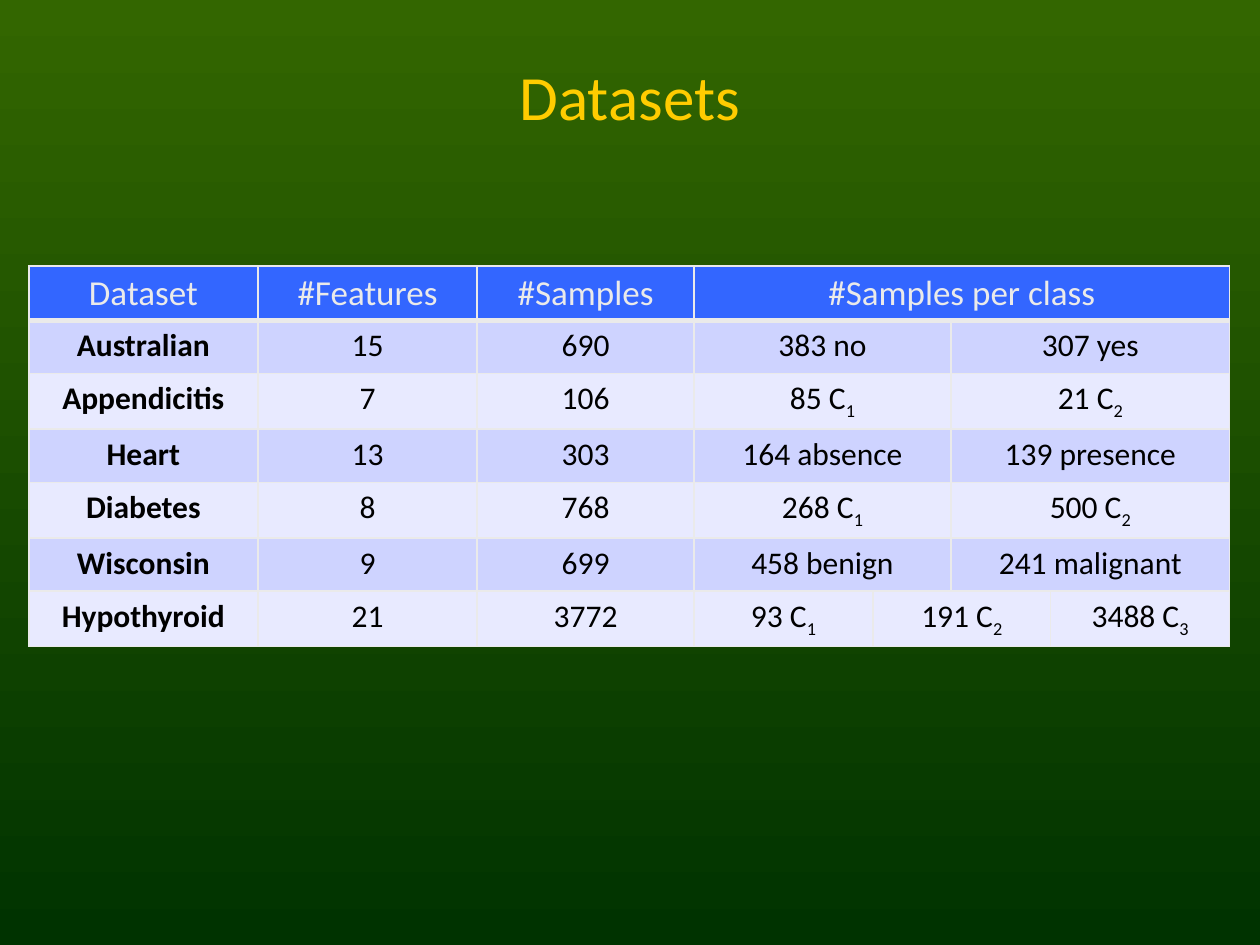
"""Build the slide that lists the datasets and their samples per class."""
from dataclasses import dataclass

import lxml.etree
import pptx
import pptx.dml.color
import pptx.enum.text
import pptx.oxml.ns
import pptx.slide
import pptx.table
import pptx.text.text
import pptx.util

Cm = pptx.util.Cm
RGBColor = pptx.dml.color.RGBColor
qn = pptx.oxml.ns.qn

FONT = "Calibri"
GREEN_TOP = RGBColor(0x33, 0x66, 0x00)
GREEN_BOTTOM = RGBColor(0x00, 0x33, 0x00)
GOLD = RGBColor(0xFF, 0xCC, 0x00)
BLUE = RGBColor(0x33, 0x66, 0xFF)
BAND_DARK = RGBColor(0xCE, 0xD3, 0xFF)
BAND_LIGHT = RGBColor(0xE8, 0xEA, 0xFF)
PALE = RGBColor(0xEA, 0xEA, 0xEA)
BLACK = RGBColor(0x00, 0x00, 0x00)

COLUMN_WIDTHS = [4.62, 4.42, 4.37, 3.61, 1.57, 2.01, 3.61]
ROW_HEIGHT = 1.07
HEADER_SPANS = (1, 1, 1, 4)
TWO_CLASSES = (1, 1, 1, 2, 2)
THREE_CLASSES = (1, 1, 1, 1, 2, 1)


@dataclass
class Row:
    """Texts of one table row, with "_" before a subscript, and their column spans."""
    texts: list[str]
    spans: tuple[int, ...] = TWO_CLASSES


ROWS = [
    Row(["Dataset", "#Features", "#Samples", "#Samples per class"], HEADER_SPANS),
    Row(["Australian", "15", "690", "383 no", "307 yes"]),
    Row(["Appendicitis", "7", "106", "85 C_1", "21 C_2"]),
    Row(["Heart", "13", "303", "164 absence", "139 presence"]),
    Row(["Diabetes", "8", "768", "268 C_1", "500 C_2"]),
    Row(["Wisconsin", "9", "699", "458 benign", "241 malignant"]),
    Row(["Hypothyroid", "21", "3772", "93 C_1", "191 C_2", "3488 C_3"], THREE_CLASSES),
]


def style_run(run: pptx.text.text._Run, size: int, color: RGBColor, bold: bool = False) -> None:
    """Set the font of a run."""
    run.font.name = FONT
    run.font.size = pptx.util.Pt(size)
    run.font.bold = bold
    run.font.color.rgb = color


def add_title(slide: pptx.slide.Slide, text: str) -> None:
    """Add the centred title with its text shadow."""
    title = slide.shapes.add_textbox(Cm(1.9), Cm(0.71), Cm(21.59), Cm(2.41))
    title.text_frame.word_wrap = True
    title.text_frame.vertical_anchor = pptx.enum.text.MSO_ANCHOR.MIDDLE
    title.text_frame.text = text
    heading = title.text_frame.paragraphs[0]
    heading.alignment = pptx.enum.text.PP_ALIGN.CENTER
    style_run(heading.runs[0], 36, GOLD)
    effects = lxml.etree.Element(qn("a:effectLst"))
    shadow = lxml.etree.SubElement(effects, qn("a:outerShdw"), dist="35921", dir="2700000")
    lxml.etree.SubElement(shadow, qn("a:srgbClr"), val=str(BLACK))
    heading.runs[0].font.fill._xPr.find(qn("a:solidFill")).addnext(effects)


def set_borders(cell: pptx.table._Cell, bottom: float) -> None:
    """Draw thin pale borders, with the bottom one of the given width in points."""
    properties = cell._tc.get_or_add_tcPr()
    widths = {"a:lnL": 1, "a:lnR": 1, "a:lnT": 1, "a:lnB": bottom}
    for position, (side, width) in enumerate(widths.items()):
        line = lxml.etree.Element(qn(side), w=str(pptx.util.Pt(width)))
        fill = lxml.etree.SubElement(line, qn("a:solidFill"))
        lxml.etree.SubElement(fill, qn("a:srgbClr"), val=str(PALE))
        properties.insert(position, line)


def write_cell(cell: pptx.table._Cell, text: str, size: int, color: RGBColor, bold: bool) -> None:
    """Write centred text whose part after "_" is a subscript."""
    base, _, subscript = text.partition("_")
    cell.text_frame.text = base
    paragraph = cell.text_frame.paragraphs[0]
    paragraph.alignment = pptx.enum.text.PP_ALIGN.CENTER
    if subscript:
        lowered = paragraph.add_run()
        lowered.text = subscript
        lowered._r.get_or_add_rPr().set("baseline", "-25000")
    for run in paragraph.runs:
        style_run(run, size, color, bold)


def add_datasets(slide: pptx.slide.Slide, rows: list[Row]) -> None:
    """Add the table of datasets."""
    datasets = slide.shapes.add_table(
        len(rows), len(COLUMN_WIDTHS), Cm(0.58), Cm(5.36),
        Cm(sum(COLUMN_WIDTHS)), Cm(ROW_HEIGHT * len(rows))).table
    datasets.first_row = datasets.horz_banding = False
    for column, width in zip(datasets.columns, COLUMN_WIDTHS):
        column.width = Cm(width)
    for index, row in enumerate(rows):
        is_header = index == 0
        datasets.rows[index].height = Cm(ROW_HEIGHT)
        band = BLUE if is_header else BAND_DARK if index % 2 else BAND_LIGHT
        for cell in datasets.rows[index].cells:
            cell.fill.solid()
            cell.fill.fore_color.rgb = band
            set_borders(cell, 3 if is_header else 1)
        start = 0
        for text, span in zip(row.texts, row.spans):
            cell = datasets.cell(index, start)
            if span > 1:
                cell.merge(datasets.cell(index, start + span - 1))
            write_cell(cell, text, 20 if is_header else 18, PALE if is_header else BLACK,
                       not is_header and start == 0)
            start += span


def main() -> None:
    """Build and save the presentation."""
    presentation = pptx.Presentation()
    presentation.slide_width, presentation.slide_height = Cm(25.4), Cm(19.05)
    slide = presentation.slides.add_slide(presentation.slide_layouts[6])
    background = slide.background.fill
    background.gradient()
    background.gradient_angle = 270
    for stop, color in zip(background.gradient_stops, (GREEN_TOP, GREEN_BOTTOM)):
        stop.color.rgb = color
    add_title(slide, "Datasets")
    add_datasets(slide, ROWS)
    presentation.save("out.pptx")


if __name__ == "__main__":
    main()
